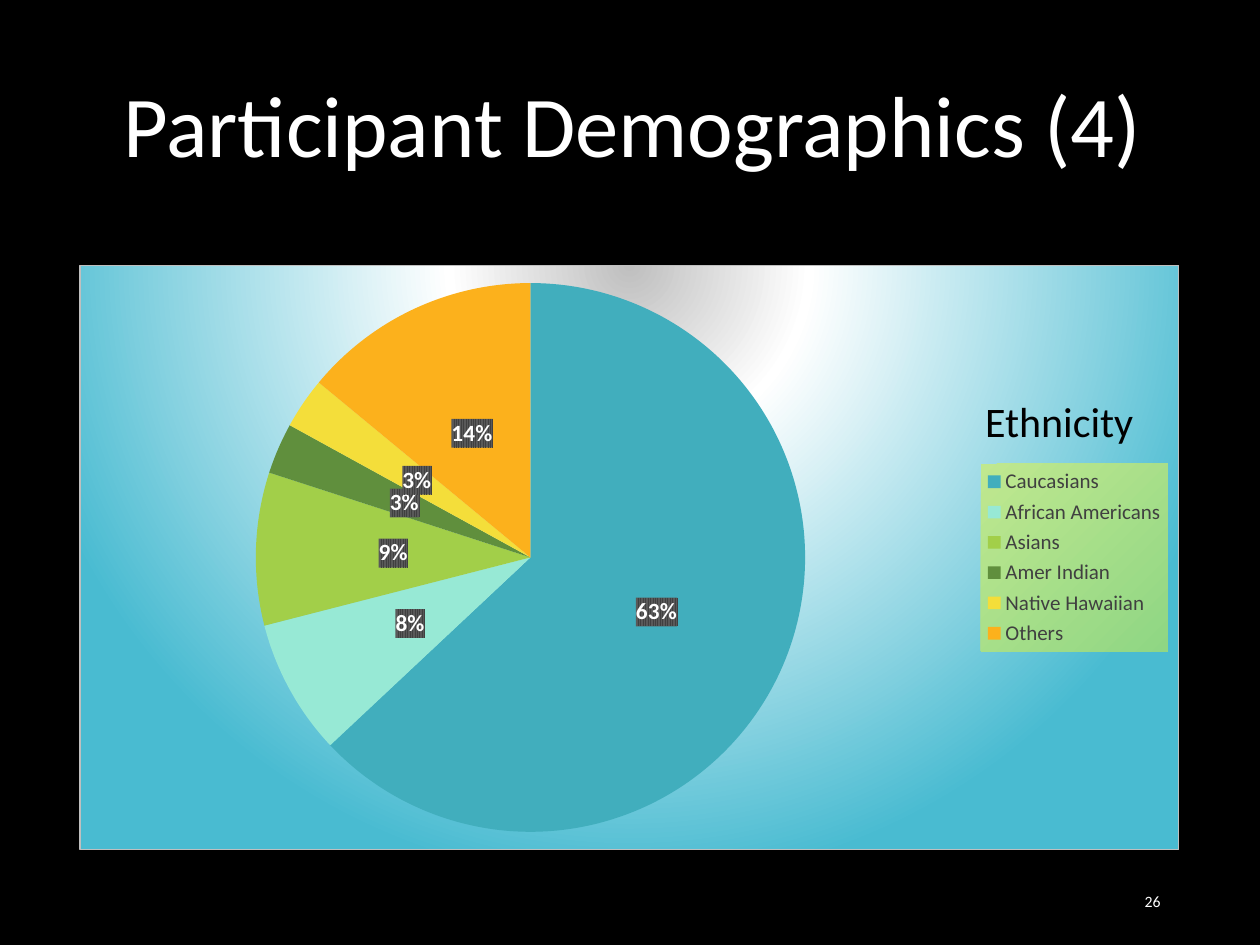
from dataclasses import dataclass

from lxml import etree
from pptx import Presentation
from pptx.chart.data import CategoryChartData
from pptx.dml.color import RGBColor
from pptx.enum.chart import XL_CHART_TYPE, XL_LABEL_POSITION, XL_LEGEND_POSITION
from pptx.enum.text import MSO_ANCHOR, PP_ALIGN
from pptx.util import Inches, Pt

PIE = XL_CHART_TYPE.PIE
MID_LABEL = XL_LABEL_POSITION.CENTER
RIGHT_KEY = XL_LEGEND_POSITION.RIGHT
TOP, MIDDLE = MSO_ANCHOR.TOP, MSO_ANCHOR.MIDDLE
LEFT, CENTER, RIGHT = PP_ALIGN.LEFT, PP_ALIGN.CENTER, PP_ALIGN.RIGHT

WIDE, HIGH = 10, 7.5
SPACES = (
    'xmlns:c="http://schemas.openxmlformats.org/drawingml/2006/chart" '
    'xmlns:a="http://schemas.openxmlformats.org/drawingml/2006/main"'
)
GROUPS = [
    ("Caucasians", 63),
    ("African Americans", 8),
    ("Asians", 9),
    ("Amer Indian", 3),
    ("Native Hawaiian", 3),
    ("Others", 14),
]


@dataclass(frozen=True)
class Theme:
    font: str = "Calibri"
    back: str = "000000"
    light: str = "FFFFFF"
    dark: str = "000000"
    grey: str = "404040"
    stripe: str = "595959"
    edge: str = "BFBFBF"
    glow: tuple = ((0, "BFBFBF"), (29, "FFFFFF"), (100, "49BBD1"))
    key: tuple = ((0, "C0E88F"), (100, "8FD684"))
    slices: tuple = ("41AEBD", "97E9D5", "A2CF49", "608F3D", "F4DE3A", "FCB11C")
    title: float = 49.5
    head: float = 24
    label: float = 13.3
    legend: float = 12
    base: float = 10
    small: float = 9


def node(tag, body):
    return etree.fromstring(f"<c:{tag} {SPACES}>{body}</c:{tag}>")


def blend(stops, shade):
    """Gradient fill from (percent, colour) stops and a shading element."""
    marks = "".join(
        f'<a:gs pos="{at * 1000}"><a:srgbClr val="{tint}"/></a:gs>' for at, tint in stops
    )
    return f'<a:gradFill rotWithShape="1"><a:gsLst>{marks}</a:gsLst>{shade}</a:gradFill>'


def layout(x, y, w, h, inner=False):
    """Manual placing, as shares of the chart's size."""
    target = '<c:layoutTarget val="inner"/>' if inner else ""
    modes = '<c:xMode val="edge"/><c:yMode val="edge"/>'
    sizes = "".join(f'<c:{k} val="{v}"/>' for k, v in zip("xywh", (x, y, w, h)))
    return node("layout", f"<c:manualLayout>{target}{modes}{sizes}</c:manualLayout>")


def paint(owner, body):
    """Put shape properties just before the text properties of a chart part."""
    owner.find("{*}txPr").addprevious(node("spPr", body))


class Deck:
    def __init__(self, theme):
        self.theme = theme
        self.file = Presentation()
        self.file.slide_width = Inches(WIDE)
        self.file.slide_height = Inches(HIGH)
        self.slide = self.file.slides.add_slide(self.file.slide_layouts[6])
        fill = self.slide.background.fill
        fill.solid()
        fill.fore_color.rgb = RGBColor.from_string(theme.back)

    def place(self, x, y, w, h):
        """Turn shares of the slide into lengths."""
        return [Inches(n) for n in (x * WIDE, y * HIGH, w * WIDE, h * HIGH)]

    def style(self, font, size, tint, bold=False):
        font.name = self.theme.font
        font.size = Pt(size)
        font.bold = bold
        font.color.rgb = RGBColor.from_string(tint)

    def text(self, words, box, size, tint, align=LEFT, anchor=TOP, wrap=True, pitch=1.0):
        frame = self.slide.shapes.add_textbox(*self.place(*box)).text_frame
        frame.word_wrap = wrap
        frame.vertical_anchor = anchor
        para = frame.paragraphs[0]
        para.text = words
        para.alignment = align
        para.line_spacing = pitch
        self.style(para.font, size, tint)

    def pie(self, groups, box):
        look = self.theme
        data = CategoryChartData()
        data.categories = [name for name, _ in groups]
        data.add_series("Series 1", [share for _, share in groups])
        chart = self.slide.shapes.add_chart(PIE, *self.place(*box), data).chart
        chart.has_title = False
        self.style(chart.font, look.base, look.light)

        # Chart area and plot
        shade = (
            '<a:path path="circle">'
            '<a:fillToRect l="50000" t="-80000" r="50000" b="180000"/></a:path>'
        )
        edge = (
            f'<a:ln w="{Pt(0.75)}"><a:solidFill><a:srgbClr val="{look.edge}"/>'
            "</a:solidFill></a:ln>"
        )
        root = chart.element if hasattr(chart, "element") else chart._chartSpace
        paint(root, blend(look.glow, shade) + edge)
        area = root.find(".//{*}plotArea")
        for old in area.findall("{*}layout"):
            area.remove(old)
        area.insert(0, layout(0.16, 0.03, 0.5, 0.94, inner=True))

        # Slices
        series = chart.plots[0].series[0]
        for spot, tint in enumerate(look.slices):
            fill = series.points[spot].format.fill
            fill.solid()
            fill.fore_color.rgb = RGBColor.from_string(tint)

        # Labels
        tags = series.data_labels
        tags.show_percentage = True
        tags.show_value = False
        tags.number_format = "0%"
        tags.number_format_is_linked = False
        tags.position = MID_LABEL
        self.style(tags.font, look.label, look.light, bold=True)
        paint(
            tags._element,
            f'<a:pattFill prst="narVert"><a:fgClr><a:srgbClr val="{look.grey}"/></a:fgClr>'
            f'<a:bgClr><a:srgbClr val="{look.stripe}"/></a:bgClr></a:pattFill>',
        )

        # Legend
        chart.has_legend = True
        key = chart.legend
        key.position = RIGHT_KEY
        key.include_in_layout = False
        self.style(key.font, look.legend, look.grey)
        paint(key._element, blend(look.key, '<a:lin ang="2700000" scaled="0"/>'))
        for old in key._element.findall("{*}layout"):
            key._element.remove(old)
        key._element.find("{*}legendPos").addnext(layout(0.82, 0.34, 0.17, 0.32))


def main():
    look = Theme()
    deck = Deck(look)
    deck.text("Participant Demographics (4)", (0.052, 0.053, 0.9, 0.167), look.title,
              look.light, CENTER, MIDDLE, pitch=0.9)
    deck.pie(GROUPS, (0.063, 0.28, 0.873, 0.62))
    deck.text("Ethnicity", (0.772, 0.412, 0.143, 0.067), look.head, look.dark, wrap=False)
    deck.text("26", (0.706, 0.927, 0.225, 0.053), look.small, look.light, RIGHT, MIDDLE)
    deck.file.save("out.pptx")


if __name__ == "__main__":
    main()
